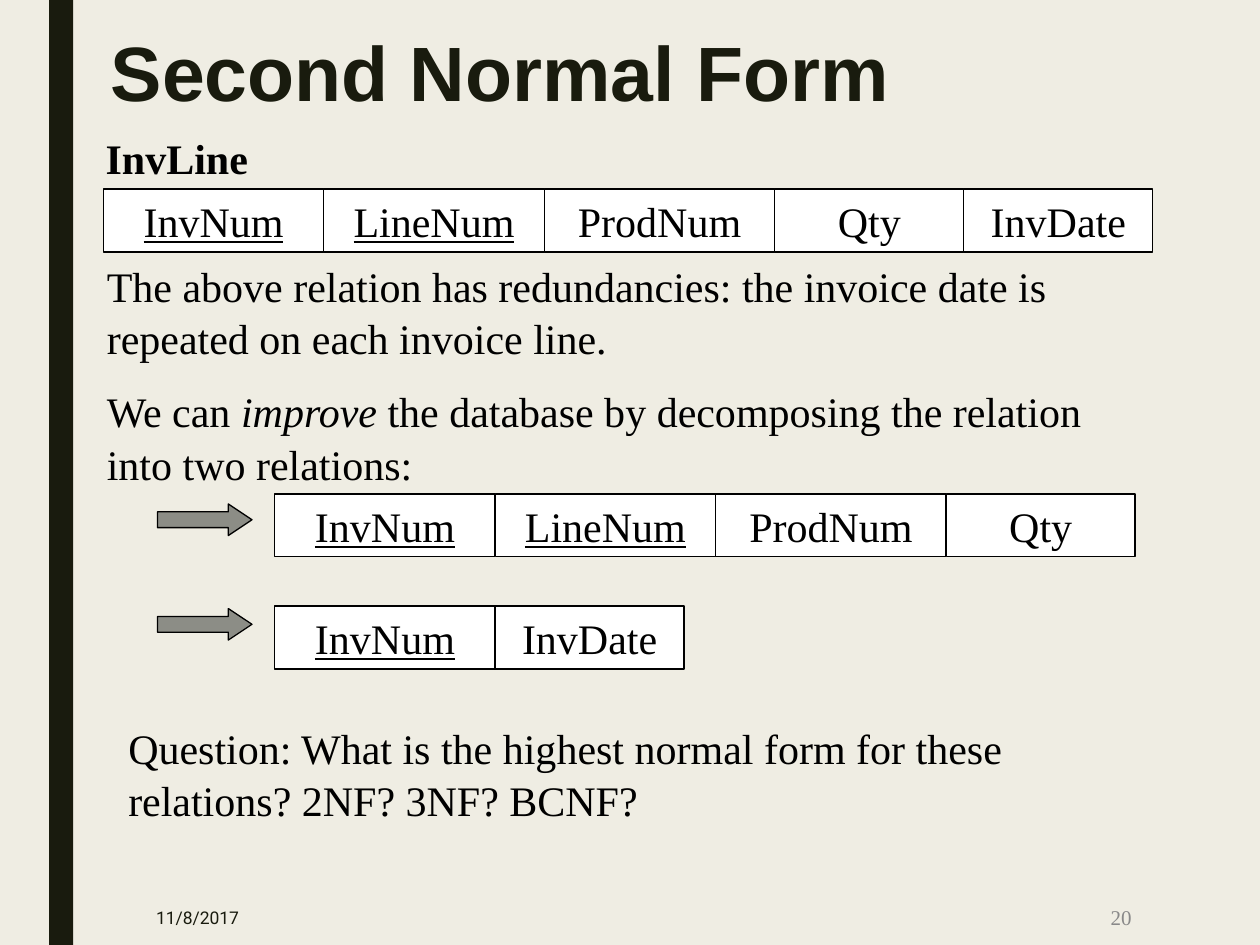
from pptx import Presentation
from pptx.dml.color import RGBColor
from pptx.enum import shapes, text
from pptx.util import Inches, Pt

INK = RGBColor(0x19, 0x1B, 0x0E)
CREAM = RGBColor(0xEF, 0xED, 0xE3)
BLACK = RGBColor(0, 0, 0)
WHITE = RGBColor(255, 255, 255)
ARROW = RGBColor(0x8C, 0x8D, 0x86)
GRAY = RGBColor(0x89, 0x89, 0x89)

SERIF = "Times New Roman"
TOP, MIDDLE = text.MSO_ANCHOR.TOP, text.MSO_ANCHOR.MIDDLE
LEFT, CENTER, RIGHT = text.PP_ALIGN.LEFT, text.PP_ALIGN.CENTER, text.PP_ALIGN.RIGHT
BODY = {"name": SERIF, "size": Pt(24)}

TITLE = "Second Normal Form"
WIDTHS = {"InvNum": 1.75, "LineNum": 1.75, "ProdNum": 1.83, "Qty": 1.5, "InvDate": 1.5}
KEYS = {"InvNum", "LineNum"}
RELATIONS = [
    (0.82, 1.5, ["InvNum", "LineNum", "ProdNum", "Qty", "InvDate"]),
    (2.18, 3.92, ["InvNum", "LineNum", "ProdNum", "Qty"]),
    (2.18, 4.81, ["InvNum", "InvDate"]),
]
ARROWS = [(1.25, 4), (1.25, 4.83)]
EXPLANATION = [
    [("The above relation has redundancies: the invoice date is "
      "repeated on each invoice line.", {})],
    [("We can ", {}), ("improve", {"italic": True}),
     (" the database by decomposing the relation into two relations:", {})],
]
QUESTION = [[("Question: What is the highest normal form for these "
              "relations? 2NF? 3NF? BCNF?", {})]]
HEADING = [[("InvLine", {"bold": True})]]
DATE = [[("11/8/2017", {"name": "Roboto", "size": Pt(10)})]]
NUMBER = [[("20", {"size": Pt(12)})]]


def write(tf, paragraphs, color=BLACK, align=LEFT, anchor=TOP, wrap=True, **spacing):
    tf.word_wrap = wrap
    tf.vertical_anchor = anchor
    for i, runs in enumerate(paragraphs):
        p = tf.paragraphs[0] if i == 0 else tf.add_paragraph()
        p.alignment = align
        for name, value in spacing.items():
            setattr(p, name, value)
        for words, style in runs:
            r = p.add_run()
            r.text = words
            r.font.color.rgb = color
            for name, value in {**BODY, **style}.items():
                setattr(r.font, name, value)


def add_text(s, box, paragraphs, **layout):
    sp = s.shapes.add_textbox(*map(Inches, box))
    write(sp.text_frame, paragraphs, **layout)


def add_shape(s, kind, box, fill, line=BLACK):
    sp = s.shapes.add_shape(kind, *map(Inches, box))
    sp.shadow.inherit = False
    sp.fill.solid()
    sp.fill.fore_color.rgb = fill
    if line is None:
        sp.line.fill.background()
    else:
        sp.line.color.rgb = line
        sp.line.width = Pt(0.75)
    return sp


def add_relation(s, x, y, fields):
    for field in fields:
        sp = add_shape(s, shapes.MSO_SHAPE.RECTANGLE, (x, y, WIDTHS[field], 0.5), WHITE)
        style = {"underline": True} if field in KEYS else {}
        write(sp.text_frame, [[(field, style)]], align=CENTER)
        x += WIDTHS[field]


def main():
    prs = Presentation()
    prs.slide_width, prs.slide_height = Inches(10), Inches(7.5)
    s = prs.slides.add_slide(prs.slide_layouts[5])
    s.background.fill.solid()
    s.background.fill.fore_color.rgb = CREAM
    add_shape(s, shapes.MSO_SHAPE.RECTANGLE, (0.39, 0, 0.19, 7.5), INK, None)

    title = s.shapes.title
    title.left, title.top, title.width, title.height = map(Inches, (0.78, 0.23, 7.88, 1.62))
    style = {"name": "Arial", "size": Pt(44), "bold": True}
    write(title.text_frame, [[(TITLE, style)]], color=INK, line_spacing=0.89)

    add_text(s, (1.14, 7.06, 0.99, 0.44), DATE, color=INK, anchor=MIDDLE)
    add_text(s, (7.77, 7.06, 1.31, 0.44), NUMBER, color=GRAY, align=RIGHT, anchor=MIDDLE)
    add_text(s, (0.74, 1, 1.33, 0.5), HEADING, wrap=False)
    prose = {"space_before": Pt(12), "line_spacing": 1.04}
    add_text(s, (0.75, 2, 8.5, 1.9), EXPLANATION, **prose)
    add_text(s, (0.92, 5.67, 8.17, 0.9), QUESTION, **prose)

    for x, y, fields in RELATIONS:
        add_relation(s, x, y, fields)
    for x, y in ARROWS:
        sp = add_shape(s, shapes.MSO_SHAPE.RIGHT_ARROW, (x, y, 0.75, 0.25), ARROW)
        sp.adjustments[0], sp.adjustments[1] = 0.5, 0.75

    prs.save("out.pptx")


if __name__ == "__main__":
    main()
